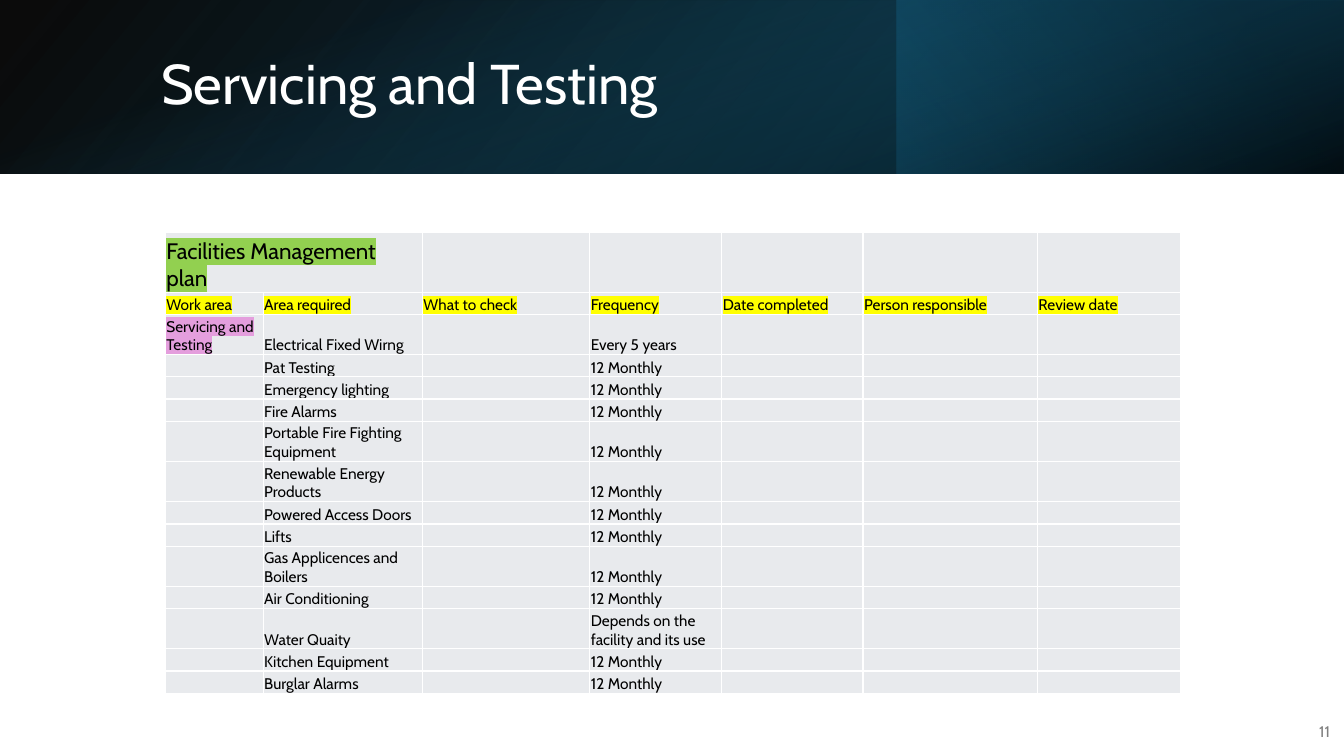
"""Build the Servicing and Testing slide."""
from lxml import etree
from pptx import Presentation
from pptx import util as u
from pptx.dml.color import RGBColor
from pptx.enum import shapes, text
from pptx.oxml import ns

FONT = "Cabin"
COLUMNS = [0.97, 1.58, 1.66, 1.31, 1.4, 1.73, 1.42]
TITLE_HEIGHT, ROW_HEIGHT, TALL_HEIGHT = 0.59, 0.22, 0.4
ONE_LINE = 20
HEADINGS = ["Work area", "Area required", "What to check", "Frequency",
            "Date completed", "Person responsible", "Review date"]
YEARLY = "12 Monthly"
CHECKS = [
    ("Electrical Fixed Wirng", "Every 5 years"),
    ("Pat Testing", YEARLY),
    ("Emergency lighting", YEARLY),
    ("Fire Alarms", YEARLY),
    ("Portable Fire Fighting Equipment", YEARLY),
    ("Renewable Energy Products", YEARLY),
    ("Powered Access Doors", YEARLY),
    ("Lifts", YEARLY),
    ("Gas Applicences and Boilers", YEARLY),
    ("Air Conditioning", YEARLY),
    ("Water Quaity", "Depends on the facility and its use"),
    ("Kitchen Equipment", YEARLY),
    ("Burglar Alarms", YEARLY),
]


def rgb(value):
    """Turn a hex string into a colour."""
    return RGBColor.from_string(value)


def add_xml(parent, tag, **attrs):
    """Append a drawing element and return it."""
    values = {name: str(value) for name, value in attrs.items()}
    return etree.SubElement(parent, ns.qn(f"a:{tag}"), values)


def add_run(p, content, size, color, highlight=None):
    """Add one formatted run to a paragraph."""
    r = p.add_run()
    r.text = content
    r.font.size = u.Pt(size)
    r.font.color.rgb = rgb(color)
    if highlight:
        add_xml(add_xml(r.font._element, "highlight"), "srgbClr", val=highlight)
    r.font.name = FONT


def add_text(slide, box, content, size, color, align):
    """Add a vertically centred text box and return its paragraph."""
    tf = slide.shapes.add_textbox(*map(u.Inches, box)).text_frame
    tf.word_wrap = True
    tf.vertical_anchor = text.MSO_ANCHOR.MIDDLE
    p = tf.paragraphs[0]
    p.alignment = align
    add_run(p, content, size, color)
    return p


def add_gradient(slide, box, stops, angle, rotation=0, flip=False):
    """Add a rectangle with a transparent linear gradient."""
    sp = slide.shapes.add_shape(shapes.MSO_SHAPE.RECTANGLE, *map(u.Inches, box))
    sp.shadow.inherit = False
    sp.rotation = rotation
    sp.line.fill.background()
    sp.fill.gradient()
    grad = sp._element.spPr.find(ns.qn("a:gradFill"))
    for child in list(grad):
        grad.remove(child)
    grad.set("rotWithShape", "1")
    stop_list = add_xml(grad, "gsLst")
    for position, color, opacity in stops:
        stop = add_xml(stop_list, "gs", pos=position * 1000)
        add_xml(add_xml(stop, "srgbClr", val=color), "alpha", val=opacity * 1000)
    add_xml(grad, "lin", ang=angle * 60000, scaled=0)
    if flip:
        sp._element.spPr.xfrm.set("flipH", "1")


def format_cell(cell):
    """Give a cell its margins, white borders and grey fill."""
    cell.margin_left = cell.margin_right = cell.margin_top = u.Inches(0.01)
    cell.margin_bottom = 0
    cell.vertical_anchor = text.MSO_ANCHOR.BOTTOM
    tc_pr = cell._tc.get_or_add_tcPr()
    for side in ("lnL", "lnR", "lnT", "lnB"):
        ln = add_xml(tc_pr, side, w=u.Pt(1))
        add_xml(add_xml(ln, "solidFill"), "srgbClr", val="FFFFFF")
    cell.fill.solid()
    cell.fill.fore_color.rgb = rgb("E8EAED")


def add_plan(slide, left, top):
    """Add the facilities management table."""
    rows = [["Facilities Management plan"] + [""] * 6, HEADINGS]
    for i, (area, frequency) in enumerate(CHECKS):
        work = "" if i else "Servicing and Testing"
        rows.append([work, area, "", frequency, "", "", ""])
    heights = [TITLE_HEIGHT] + [
        TALL_HEIGHT if max(map(len, row)) > ONE_LINE else ROW_HEIGHT
        for row in rows[1:]]
    size = (left, top, sum(COLUMNS), sum(heights))
    table = slide.shapes.add_table(
        len(rows), len(COLUMNS), *map(u.Inches, size)).table
    table.first_row = table.horz_banding = False
    for column, width in zip(table.columns, COLUMNS):
        column.width = u.Inches(width)
    highlights = {(0, 0): "92D050", (2, 0): "E49EDD"}
    highlights.update({(1, c): "FFFF00" for c in range(len(COLUMNS))})
    for r, (row, height) in enumerate(zip(rows, heights)):
        table.rows[r].height = u.Inches(height)
        for c, content in enumerate(row):
            cell = table.cell(r, c)
            format_cell(cell)
            p = cell.text_frame.paragraphs[0]
            if content:
                add_run(p, content, 11 if r else 16, "000000", highlights.get((r, c)))
            else:
                add_xml(p._p, "endParaRPr", sz=1100)
    table.cell(0, 0).merge(table.cell(0, 1))


def main():
    """Build and save the slide."""
    prs = Presentation()
    prs.slide_width, prs.slide_height = u.Inches(13.33), u.Inches(7.5)
    slide = prs.slides.add_slide(prs.slide_layouts[6])
    add_gradient(slide, (0, 0, 13.33, 1.72),
                 [(0, "000000", 96), (100, "104862", 100)], 140, flip=True)
    add_gradient(slide, (8.89, 0, 4.44, 1.72),
                 [(19, "0B3041", 68), (100, "156082", 79)], 320, rotation=180)
    add_gradient(slide, (5.8, -5.8, 1.72, 13.33),
                 [(23, "156082", 0), (99, "000000", 74)], 340, rotation=90)
    title = add_text(slide, (1.5, 0.38, 10.98, 0.96), "Servicing and Testing",
                     40, "FFFFFF", text.PP_ALIGN.LEFT)
    title.line_spacing = 0.9
    number = add_text(slide, (12.8, 7.06, 0.49, 0.4), "11",
                      11, "808080", text.PP_ALIGN.RIGHT)
    number.space_after = u.Pt(6)
    add_plan(slide, 1.64, 2.31)
    prs.save("out.pptx")


if __name__ == "__main__":
    main()
